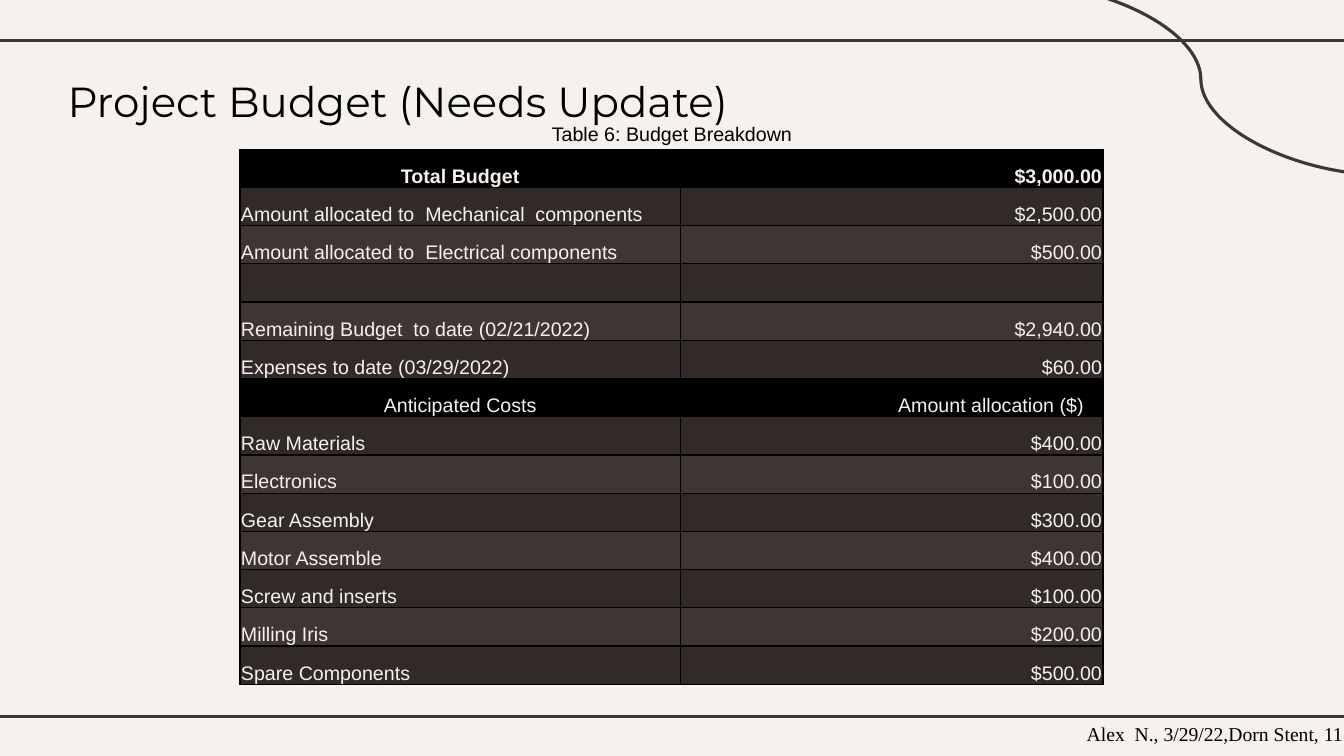
from dataclasses import dataclass

from lxml import etree
from pptx import Presentation
from pptx.dml.color import RGBColor
from pptx.enum.shapes import MSO_CONNECTOR
from pptx.enum.text import MSO_ANCHOR, PP_ALIGN
from pptx.oxml.ns import qn
from pptx.util import Inches, Pt

LEFT, CENTER, RIGHT = PP_ALIGN.LEFT, PP_ALIGN.CENTER, PP_ALIGN.RIGHT
TOP, BOTTOM = MSO_ANCHOR.TOP, MSO_ANCHOR.BOTTOM
STRAIGHT, CURVE = MSO_CONNECTOR.STRAIGHT, MSO_CONNECTOR.CURVE

TITLE = "Project Budget (Needs Update)"
CAPTION = "Table 6: Budget Breakdown"
FOOTER = "Alex  N., 3/29/22,Dorn Stent, 11"
BUDGET = [
    ("Total Budget", "$3,000.00"),
    ("Amount allocated to  Mechanical  components", "$2,500.00"),
    ("Amount allocated to  Electrical components", "$500.00"),
    ("", ""),
    ("Remaining Budget  to date (02/21/2022)", "$2,940.00"),
    ("Expenses to date (03/29/2022)", "$60.00"),
    ("Anticipated Costs", "Amount allocation ($)"),
    ("Raw Materials", "$400.00"),
    ("Electronics", "$100.00"),
    ("Gear Assembly", "$300.00"),
    ("Motor Assemble", "$400.00"),
    ("Screw and inserts", "$100.00"),
    ("Milling Iris", "$200.00"),
    ("Spare Components", "$500.00"),
]
TOTAL_ROW, COSTS_ROW = 0, 6
COL_WIDTHS = (4.37, 4.19)
TABLE_BOX = (2.38, 1.48, sum(COL_WIDTHS), 5.31)
W, H = 13.33, 7.5
RULES = [
    (STRAIGHT, -0.11, 0.4, W + 0.11, 0.4),
    (STRAIGHT, -0.11, 7.11, W + 0.11, 7.11),
    (CURVE, 10.04, -0.17, 13.78, 1.74),
]


@dataclass(frozen=True)
class Theme:
    paper: str = "F5F2EE"
    ink: str = "000000"
    line: str = "3F3533"
    bands: tuple = ("3F3533", "322A29")
    title_font: str = "Montserrat"
    body_font: str = "Arial"
    footer_font: str = "Times New Roman"
    title_size: int = 30
    body_size: int = 14
    rule_width: float = 2.25
    border_width: float = 1


T = Theme()


def rgb(value):
    return RGBColor.from_string(value)


def box(*lengths):
    return [Inches(v) for v in lengths]


def write(tf, text, font, size, color, align=LEFT, bold=False):
    p = tf.paragraphs[0]
    p.alignment = align
    r = p.add_run()
    r.text = text
    r.font.name, r.font.size, r.font.bold = font, Pt(size), bold
    r.font.color.rgb = rgb(color)


def add_rule(slide, kind, *ends):
    c = slide.shapes.add_connector(kind, *box(*ends))
    c.line.color.rgb = rgb(T.line)
    c.line.width = Pt(T.rule_width)
    etree.SubElement(c._element.spPr, qn("a:effectLst"))


def add_label(slide, bounds, text, font, align):
    tf = slide.shapes.add_textbox(*box(*bounds)).text_frame
    tf.word_wrap = True
    write(tf, text, font, T.body_size, T.ink, align)


def add_borders(cell):
    tc_pr = cell._tc.get_or_add_tcPr()
    for i, side in enumerate(("lnL", "lnR", "lnT", "lnB")):
        ln = etree.Element(qn(f"a:{side}"), w=str(Pt(T.border_width)))
        fill = etree.SubElement(ln, qn("a:solidFill"))
        etree.SubElement(fill, qn("a:srgbClr"), val=T.ink)
        tc_pr.insert(i, ln)


def add_budget(slide):
    table = slide.shapes.add_table(len(BUDGET), 2, *box(*TABLE_BOX)).table
    for col, width in zip(table.columns, COL_WIDTHS):
        col.width = Inches(width)
    for i, texts in enumerate(BUDGET):
        table.rows[i].height = Inches(TABLE_BOX[3] / len(BUDGET))
        heading = i in (TOTAL_ROW, COSTS_ROW)
        for j, text in enumerate(texts):
            cell = table.cell(i, j)
            cell.fill.solid()
            cell.fill.fore_color.rgb = rgb(T.ink if heading else T.bands[i % 2])
            cell.vertical_anchor = BOTTOM
            cell.margin_left = cell.margin_right = cell.margin_top = Inches(0.01)
            cell.margin_bottom = 0
            if (i, j) == (COSTS_ROW, 1):
                cell.margin_right = Inches(0.19)
            add_borders(cell)
            if text:
                align = RIGHT if j else CENTER if heading else LEFT
                write(cell.text_frame, text, T.body_font, T.body_size,
                      T.paper, align, i == TOTAL_ROW)


def add_title(slide):
    sp = slide.shapes.title
    sp.left, sp.top, sp.width, sp.height = box(0.57, 0.65, 6.87, 0.84)
    tf = sp.text_frame
    tf.word_wrap = True
    tf.vertical_anchor = TOP
    tf.margin_left = tf.margin_right = tf.margin_top = tf.margin_bottom = Inches(0.1)
    write(tf, TITLE, T.title_font, T.title_size, T.ink)


def main():
    prs = Presentation()
    prs.slide_width, prs.slide_height = box(W, H)
    slide = prs.slides.add_slide(prs.slide_layouts[5])
    slide.background.fill.solid()
    slide.background.fill.fore_color.rgb = rgb(T.paper)
    for rule in RULES:
        add_rule(slide, *rule)
    add_title(slide)
    add_budget(slide)
    add_label(slide, (4.59, 1.16, 4.15, 0.34), CAPTION, T.body_font, CENTER)
    add_label(slide, (10.68, 7.11, 3, 0.57), FOOTER, T.footer_font, LEFT)
    prs.save("out.pptx")


if __name__ == "__main__":
    main()
